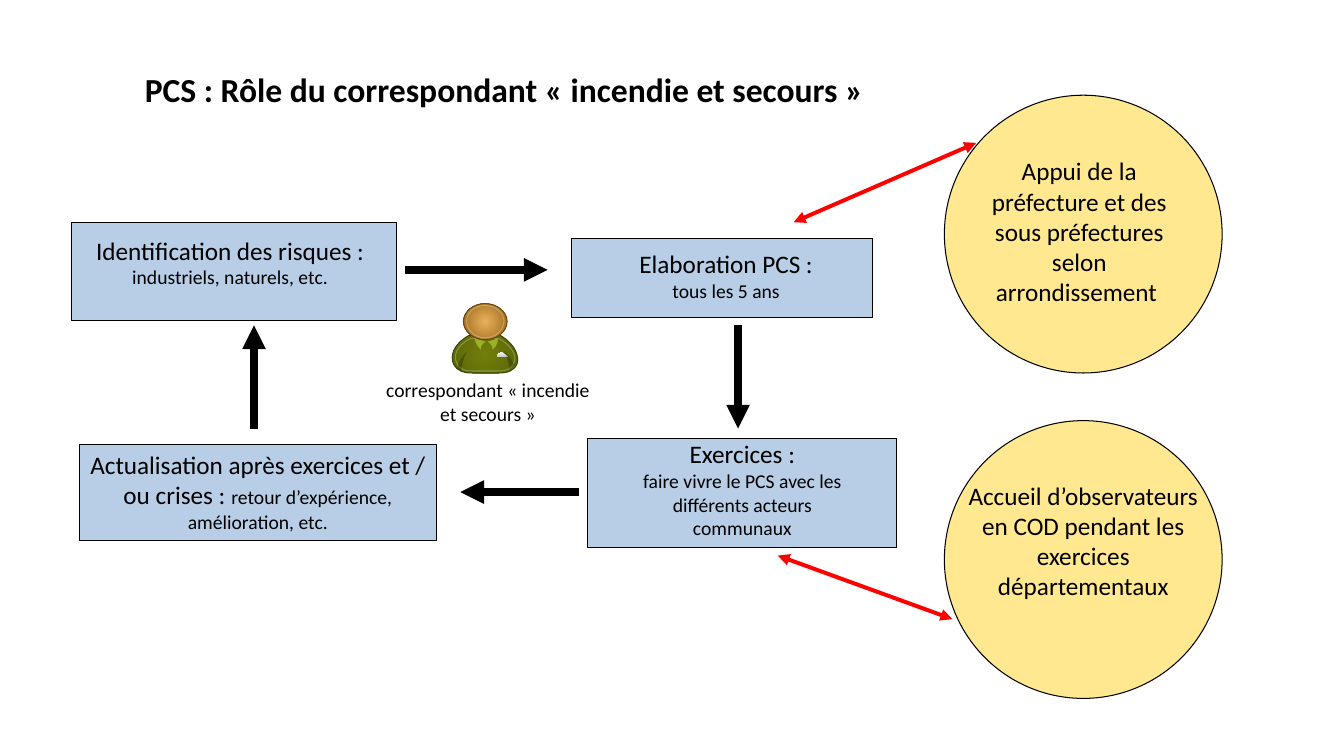
from lxml import etree
from pptx import Presentation
from pptx.dml.color import RGBColor
from pptx.enum.shapes import MSO_CONNECTOR, MSO_SHAPE
from pptx.enum.text import PP_ALIGN
from pptx.oxml.ns import qn
from pptx.util import Cm, Pt

RECT, OVAL = MSO_SHAPE.RECTANGLE, MSO_SHAPE.OVAL
STRAIGHT = MSO_CONNECTOR.STRAIGHT
LEFT, CENTER = PP_ALIGN.LEFT, PP_ALIGN.CENTER

COLORS = {
    "black": "000000", "white": "FFFFFF", "red": "FF0000",
    "blue": "729FCF", "yellow": "FFD320",
    "olive": "727E0A", "dark olive": "5B6508", "olive edge": "404604",
    "collar": "9DB029", "grey": "C9C9C9",
    "skin": "E9B15E", "dark skin": "966416", "skin edge": "6F4709",
}


class Deck:
    """Style and current slide, with one method per kind of element."""

    font = "Calibri"
    big, small = 18, 14

    def __init__(self, width, height):
        self.prs = Presentation()
        self.prs.slide_width, self.prs.slide_height = Cm(width), Cm(height)
        self.s = self.prs.slides.add_slide(self.prs.slide_layouts[6])

    def rgb(self, name):
        return RGBColor.from_string(COLORS[name])

    def fade(self, sp, path, percent):
        steps = [qn(step) for step in path.split("/")]
        color = sp.element.spPr.find("/".join(steps + [qn("a:srgbClr")]))
        etree.SubElement(color, qn("a:alpha")).set("val", str(percent * 1000))

    def paint(self, sp, fill=None, line=None, alpha=100, line_alpha=100):
        sp.shadow.inherit = False
        if fill:
            sp.fill.solid()
            sp.fill.fore_color.rgb = self.rgb(fill)
            if alpha < 100:
                self.fade(sp, "a:solidFill", alpha)
        else:
            sp.fill.background()
        if line:
            sp.line.color.rgb = self.rgb(line)
            sp.line.width = Pt(0.75)
            if line_alpha < 100:
                self.fade(sp, "a:ln/a:solidFill", line_alpha)
        else:
            sp.line.fill.background()

    def gradient(self, sp, start, end, radial=True):
        sp.fill.gradient()
        for stop, name in zip(sp.fill.gradient_stops, (start, end)):
            stop.color.rgb = self.rgb(name)
        if not radial:
            sp.fill.gradient_angle = 270
            return
        grad = sp.element.spPr.find(qn("a:gradFill"))
        circle = etree.Element(qn("a:path"), path="circle")
        etree.SubElement(circle, qn("a:fillToRect"), l="0", t="0", r="0", b="0")
        grad.replace(grad.find(qn("a:lin")), circle)

    def shape(self, kind, box, **style):
        sp = self.s.shapes.add_shape(kind, *map(Cm, box))
        self.paint(sp, **style)

    def outline(self, start, segments, **style):
        points = [(Cm(seg[i]), Cm(seg[i + 1]))
                  for seg in segments for i in range(0, len(seg), 2)]
        builder = self.s.shapes.build_freeform(*map(Cm, start))
        builder.add_line_segments(points)
        sp = builder.convert_to_shape()
        lines = iter(list(sp.element.spPr.iter(qn("a:lnTo"))))
        for seg in segments:
            parts = [next(lines) for _ in range(len(seg) // 2)]
            if len(parts) == 3:
                curve = etree.Element(qn("a:cubicBezTo"))
                parts[0].addprevious(curve)
                for part in parts:
                    curve.append(part[0])
                    part.getparent().remove(part)
        self.paint(sp, **style)
        return sp

    def text(self, box, *paragraphs, align=CENTER, bold=False):
        tf = self.s.shapes.add_textbox(*map(Cm, box)).text_frame
        tf.word_wrap = True
        for i, runs in enumerate(paragraphs):
            p = tf.add_paragraph() if i else tf.paragraphs[0]
            p.alignment = align
            p.font.name, p.font.bold = self.font, bold
            p.font.color.rgb = self.rgb("black")
            if len(runs) == 1:
                p.font.size = Pt(runs[0][1])
            for words, size in runs:
                r = p.add_run()
                r.text = words
                if len(runs) > 1:
                    r.font.size = Pt(size)

    def arrow(self, start, end, color="black", width=5.67, double=False):
        cx = self.s.shapes.add_connector(STRAIGHT, *map(Cm, start + end))
        cx.line.color.rgb = self.rgb(color)
        cx.line.width = Pt(width)
        ln = cx.element.spPr.find(qn("a:ln"))
        for tag in ("a:headEnd", "a:tailEnd") if double else ("a:tailEnd",):
            etree.SubElement(ln, qn(tag), type="triangle")
        etree.SubElement(cx.element.spPr, qn("a:effectLst"))

    def person(self):
        body = self.outline((11.91, 9.4), [
            (12.57, 9.4), (12.78, 9.4, 12.95, 9.35, 13.03, 9.17),
            (13.08, 9.02, 13.03, 8.71, 12.62, 8.46), (11.81, 8.46),
            (11.4, 8.69, 11.35, 8.99, 11.43, 9.17),
            (11.53, 9.37, 11.71, 9.4, 11.91, 9.4)], line="olive edge")
        self.gradient(body, "olive", "dark olive")
        self.outline((12.24, 8.61), [
            (12.24, 8.61, 12.09, 8.69, 12.12, 8.81),
            (11.99, 8.71, 11.96, 8.53, 11.96, 8.53)], fill="collar")
        self.outline((11.91, 9.35), [
            (12.57, 9.35), (12.73, 9.35, 12.9, 9.3, 12.95, 9.14),
            (13.03, 9.02, 12.95, 8.74, 12.57, 8.53), (11.86, 8.53),
            (11.48, 8.71, 11.43, 9, 11.51, 9.14),
            (11.58, 9.32, 11.73, 9.35, 11.91, 9.35)], line="white", line_alpha=25)
        self.outline((12.29, 8.61), [
            (12.29, 8.61, 12.42, 8.69, 12.42, 8.81),
            (12.55, 8.71, 12.55, 8.53, 12.55, 8.53)], fill="collar")
        badge = self.outline((12.52, 8.99), [
            (12.8, 8.99), (12.62, 8.86), (12.6, 8.92), (12.57, 8.89)])
        self.gradient(badge, "white", "grey", radial=False)
        self.outline((11.63, 9.35), [
            (11.56, 9.32, 11.53, 9.25, 11.53, 9.25),
            (11.58, 9.02, 11.76, 8.86, 11.76, 8.86),
            (11.76, 8.86, 11.61, 9.22, 11.63, 9.35)], fill="black", alpha=23)
        self.outline((12.83, 9.3), [
            (12.9, 9.27, 12.95, 9.19, 12.95, 9.19),
            (12.88, 8.97, 12.7, 8.84, 12.7, 8.84),
            (12.7, 8.84, 12.85, 9.17, 12.83, 9.3)], fill="black", alpha=23)
        head = self.outline((12.78, 8.1), [
            (12.78, 8.36, 12.52, 8.56, 12.22, 8.56),
            (11.94, 8.56, 11.68, 8.36, 11.68, 8.1),
            (11.68, 7.85, 11.94, 7.65, 12.22, 7.65),
            (12.52, 7.65, 12.78, 7.85, 12.78, 8.1)], line="skin edge")
        self.gradient(head, "skin", "dark skin")
        self.outline((12.7, 8.1), [
            (12.7, 8.31, 12.5, 8.51, 12.22, 8.51),
            (11.96, 8.51, 11.76, 8.31, 11.76, 8.1),
            (11.76, 7.87, 11.96, 7.7, 12.22, 7.7),
            (12.5, 7.7, 12.7, 7.87, 12.7, 8.1)], line="white", line_alpha=25)


def main():
    d = Deck(33.87, 19.05)
    big, small = d.big, d.small
    d.text((3.4, 1.6, 18.8, 1.8),
           [("PCS : Rôle du correspondant « incendie et secours »", 24)],
           align=LEFT, bold=True)

    steps = [
        ((1.8, 5.6, 8.2, 2.47), (1.6, 5.8, 8.4, 1.6),
         [[("Identification des risques : ", big), ("industriels, naturels, etc.", small)]]),
        ((14.4, 6, 7.6, 2), (15.2, 6.13, 6.2, 1.67),
         [[("Elaboration PCS :", big)], [("tous les 5 ans", small)]]),
        ((14.8, 11.05, 7.8, 2.75), (15.41, 10.93, 6.6, 2.62),
         [[("Exercices :", big)],
          [("faire vivre le PCS avec les différents acteurs communaux", small)]]),
        ((2, 11.2, 9, 2.41), (2, 11.2, 9, 2.4),
         [[("Actualisation après exercices et / ou crises : ", big),
           ("retour d’expérience, amélioration, etc.", small)]]),
    ]
    for box, text_box, paragraphs in steps:
        d.shape(RECT, box, fill="blue", line="black", alpha=50)
        d.text(text_box, *paragraphs)

    for start, end in [((10.2, 6.8), (13.8, 6.8)), ((18.6, 8.2), (18.6, 10.8)),
                       ((14.6, 12.4), (11.6, 12.4)), ((6.4, 10.8), (6.4, 8.2))]:
        d.arrow(start, end)

    supports = [
        (2.4, (24.4, 3.8, 5.6, 4.2),
         "Appui de la préfecture et des sous préfectures selon arrondissement "),
        (10.6, (24, 11.97, 6.6, 5.24),
         "Accueil d’observateurs en COD pendant les exercices départementaux"),
    ]
    for top, text_box, words in supports:
        d.shape(OVAL, (23.8, top, 7, 7), fill="yellow", line="black", alpha=50)
        d.text(text_box, [(words, big)])

    for start, end in [((19.6, 14), (24, 15.6)), ((20, 5.6), (24.6, 3.6))]:
        d.arrow(start, end, color="red", width=2.83, double=True)

    d.person()
    d.text((9.4, 9.4, 5.8, 1.38), [("correspondant « incendie et secours »", small)])
    d.prs.save("out.pptx")


if __name__ == "__main__":
    main()
